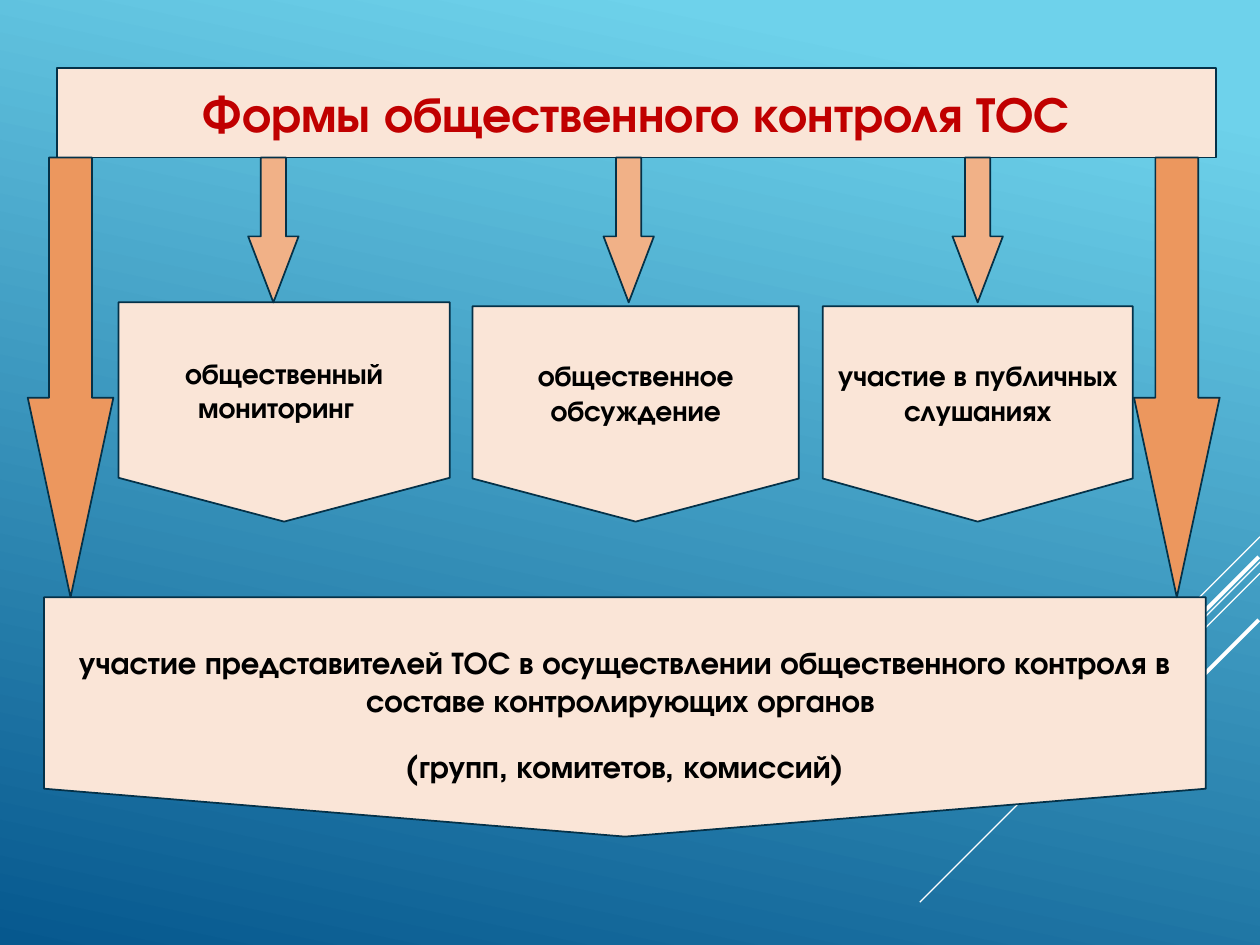
import pptx
import pptx.dml.color
import pptx.enum.shapes
import pptx.enum.text
import pptx.oxml.ns
import pptx.util
from lxml import etree
from pptx.dml.color import RGBColor
from pptx.util import Inches

SKY = RGBColor(0x6E, 0xD2, 0xEB)
DEEP_BLUE = RGBColor(0x06, 0x58, 0x8E)
WHITE = RGBColor(0xFF, 0xFF, 0xFF)
CREAM = RGBColor(0xFA, 0xE5, 0xD7)
OUTLINE = RGBColor(0x04, 0x31, 0x48)
RED = RGBColor(0xC0, 0x00, 0x00)
BLACK = RGBColor(0x00, 0x00, 0x00)
PEACH = RGBColor(0xF1, 0xB1, 0x87)
ORANGE = RGBColor(0xEC, 0x97, 0x5E)
FONT = "TeX Gyre Adventor"
SHAPES = pptx.enum.shapes.MSO_SHAPE
HEADER_BOTTOM = 1.25


def paint_background(slide):
    fill = slide.background.fill
    fill.gradient()
    fill.gradient_angle = 258
    for stop, position, color in zip(fill.gradient_stops, (0.1, 1), (SKY, DEEP_BLUE)):
        stop.position = position
        stop.color.rgb = color


def add_diagonal(slide, right, top, length, width):
    connector = slide.shapes.add_connector(
        pptx.enum.shapes.MSO_CONNECTOR.STRAIGHT,
        Inches(right), Inches(top), Inches(right - length), Inches(top + length))
    connector.line.color.rgb = WHITE
    connector.line.width = pptx.util.Pt(width)
    etree.SubElement(connector._element.spPr, pptx.oxml.ns.qn("a:effectLst"))


def add_block(slide, kind, left, top, width, height, color):
    shape = slide.shapes.add_shape(
        kind, Inches(left), Inches(top), Inches(width), Inches(height))
    shape.shadow.inherit = False
    shape.fill.solid()
    shape.fill.fore_color.rgb = color
    shape.line.color.rgb = OUTLINE
    shape.line.width = pptx.util.Pt(1)
    return shape


def write_text(shape, lines, size, color=BLACK, gap=0):
    frame = shape.text_frame
    frame.word_wrap = True
    frame.vertical_anchor = pptx.enum.text.MSO_ANCHOR.MIDDLE
    for index, line in enumerate(lines):
        paragraph = frame.add_paragraph() if index else frame.paragraphs[0]
        paragraph.alignment = pptx.enum.text.PP_ALIGN.CENTER
        if index:
            paragraph.space_before = pptx.util.Pt(gap)
        run = paragraph.add_run()
        run.text = line
        run.font.name = FONT
        run.font.size = pptx.util.Pt(size)
        run.font.bold = True
        run.font.color.rgb = color


def add_down_arrow(slide, left, width, height, head, color):
    arrow = add_block(slide, SHAPES.DOWN_ARROW, left, HEADER_BOTTOM, width, height, color)
    arrow.adjustments[0] = 0.5
    arrow.adjustments[1] = head


def main():
    presentation = pptx.Presentation()
    presentation.slide_width = Inches(10)
    presentation.slide_height = Inches(7.5)
    slide = presentation.slides.add_slide(presentation.slide_layouts[6])
    paint_background(slide)

    for right, top, length, width in (
        (10, 4.26, 0.83, 0.75),
        (10, 4.46, 2.7, 0.75),
        (10, 4.55, 1.72, 0.75),
        (9.99, 4.42, 1.57, 2.25),
        (9.99, 4.92, 1.14, 2.25),
    ):
        add_diagonal(slide, right, top, length, width)

    header = add_block(slide, SHAPES.RECTANGLE, 0.45, 0.54, 9.2, 0.71, CREAM)
    write_text(header, ["Формы общественного контроля ТОС"], 28.5, RED)

    for left, top, width, height, text in (
        (0.94, 2.4, 2.63, 1.74, "общественный мониторинг  "),
        (3.75, 2.43, 2.59, 1.71, "общественное обсуждение"),
        (6.53, 2.43, 2.46, 1.71, "участие в публичных слушаниях"),
    ):
        card = add_block(slide, SHAPES.FLOWCHART_OFFPAGE_CONNECTOR,
                         left, top, width, height, CREAM)
        write_text(card, [text], 16.5)

    summary = add_block(slide, SHAPES.FLOWCHART_OFFPAGE_CONNECTOR,
                        0.35, 4.74, 9.22, 1.9, CREAM)
    summary.text_frame.margin_top = Inches(0.38)
    write_text(summary, [
        "участие представителей ТОС в осуществлении общественного контроля "
        "в составе контролирующих органов ",
        "(групп, комитетов, комиссий)",
    ], 18, gap=16)

    for left in (1.97, 4.79, 7.56):
        add_down_arrow(slide, left, 0.4, 1.15, 1.31, PEACH)
    for left in (9, 0.22):
        add_down_arrow(slide, left, 0.68, 3.49, 2.33, ORANGE)

    presentation.save("out.pptx")


if __name__ == "__main__":
    main()
